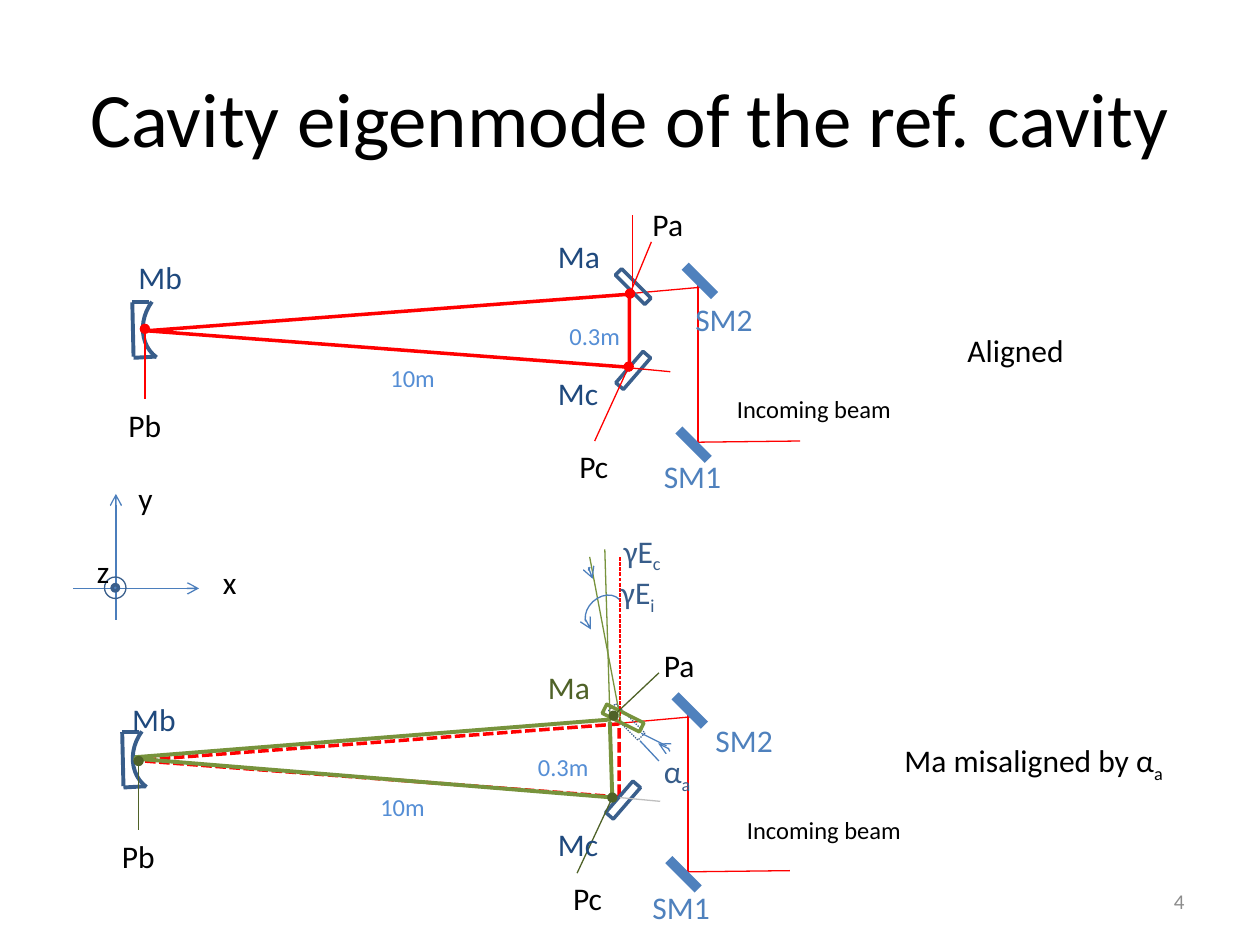
from dataclasses import dataclass

from lxml.etree import SubElement
from pptx import Presentation
from pptx.dml.color import RGBColor
from pptx.enum.dml import MSO_LINE as Dash
from pptx.enum.shapes import MSO_CONNECTOR as Connector, MSO_SHAPE as Shape
from pptx.enum.text import MSO_ANCHOR as Anchor, MSO_AUTO_SIZE as AutoSize, PP_ALIGN as Align
from pptx.oxml.ns import qn
from pptx.util import Inches, Pt

RED, BLUE, NAVY, BLACK = "FF0000", "4F81BD", "1F497D", "000000"
SKY, STEEL, AXIS, MIRROR = "558ED5", "385D8A", "4B7EBC", "3A5F8C"
GREEN, DARK_GREEN, GREY, SILVER = "77933C", "4F6228", "8C8C8C", "BFBFBF"

deck = Presentation()
deck.slide_width, deck.slide_height = Inches(10), Inches(7.5)
page = deck.slides.add_slide(deck.slide_layouts[6])


@dataclass
class Ray:
    start: tuple[float, float]
    end: tuple[float, float]
    color: str = RED
    width: float = 0.75
    dash: Dash | None = None
    head: str = ""
    tail: str = ""


@dataclass
class Outline:
    kind: Shape
    at: tuple[float, float, float, float]
    turn: float = 0
    fill: str = ""
    color: str = ""
    width: float = 2
    dash: Dash | None = None
    angles: tuple[float, ...] = ()
    head: str = ""


@dataclass
class Label:
    text: str
    at: tuple[float, float, float, float]
    color: str = BLACK
    size: float = 18
    sub: str = ""
    wrap: bool = False


def rgb(value: str) -> RGBColor:
    return RGBColor.from_string(value)


def style_line(line, color: str, width: float, dash: Dash | None, head: str, tail: str = "") -> None:
    line.color.rgb = rgb(color)
    line.width = Pt(width)
    if dash is not None:
        line.dash_style = dash
    for tag, kind in (("a:headEnd", head), ("a:tailEnd", tail)):
        if kind:
            SubElement(line._get_or_add_ln(), qn(tag)).set("type", kind)


def draw_ray(ray: Ray, dx: float = 0, dy: float = 0) -> None:
    (x1, y1), (x2, y2) = ray.start, ray.end
    connector = page.shapes.add_connector(
        Connector.STRAIGHT, Inches(x1 + dx), Inches(y1 + dy), Inches(x2 + dx), Inches(y2 + dy))
    style_line(connector.line, ray.color, ray.width, ray.dash, ray.head, ray.tail)
    SubElement(connector._element.spPr, qn("a:effectLst"))


def draw_outline(item: Outline, dx: float = 0, dy: float = 0) -> None:
    left, top, width, height = item.at
    shape = page.shapes.add_shape(
        item.kind, Inches(left + dx), Inches(top + dy), Inches(width), Inches(height))
    shape.rotation = item.turn
    shape.shadow.inherit = False
    for index, angle in enumerate(item.angles):
        shape.adjustments[index] = angle * 0.6  # degrees to 1/100000 of the stored unit
    if item.fill:
        shape.fill.solid()
        shape.fill.fore_color.rgb = rgb(item.fill)
    else:
        shape.fill.background()
    if item.color:
        style_line(shape.line, item.color, item.width, item.dash, item.head)
    else:
        shape.line.fill.background()


def add_text(text: str, at: tuple[float, float, float, float], *, color: str = BLACK,
             size: float = 18, sub: str = "", wrap: bool = True, grow: bool = False,
             align: Align = Align.LEFT, anchor: Anchor = Anchor.TOP) -> None:
    box = page.shapes.add_textbox(*map(Inches, at))
    frame = box.text_frame
    frame.word_wrap = wrap
    frame.auto_size = AutoSize.SHAPE_TO_FIT_TEXT if grow else AutoSize.NONE
    frame.vertical_anchor = anchor
    para = frame.paragraphs[0]
    para.alignment = align
    for part, lowered in ((text, False), (sub, True)):
        if not part:
            continue
        span = para.add_run()
        span.text = part
        span.font.name, span.font.size = "Calibri", Pt(size)
        span.font.color.rgb = rgb(color)
        if lowered:
            span._r.get_or_add_rPr().set("baseline", "-25000")


def draw(items: list, dx: float = 0, dy: float = 0) -> None:
    for item in items:
        if isinstance(item, Ray):
            draw_ray(item, dx, dy)
        elif isinstance(item, Outline):
            draw_outline(item, dx, dy)
        else:
            left, top, width, height = item.at
            add_text(item.text, (left + dx, top + dy, width, height), color=item.color,
                     size=item.size, sub=item.sub, wrap=item.wrap, grow=True)


def cavity(dash: Dash | None, leak: str) -> list:
    """Parts that both set-ups share, placed for the aligned one."""
    return [
        Outline(Shape.ISOSCELES_TRIANGLE, (2.79, 0.71, 0.58, 3.83), 270, color=RED, dash=dash),
        # Incoming beam and steering mirrors
        Ray((5, 2.33), (5.56, 2.28)),
        Ray((5.54, 2.25), (5.54, 3.55)),
        Ray((5.5, 3.51), (6.35, 3.5)),
        Outline(Shape.RECTANGLE, (5.39, 2.19, 0.33, 0.08), 45, fill=BLUE),
        Outline(Shape.RECTANGLE, (5.34, 3.49, 0.33, 0.08), 45, fill=BLUE),
        # Mirrors Mc and Mb
        Outline(Shape.RECTANGLE, (4.86, 2.9, 0.33, 0.08), 130.9, color=MIRROR),
        Outline(Shape.ARC, (1.15, 2.23, 0.58, 0.67), 216.1, color=STEEL, width=2.25),
        Ray((1.24, 2.83), (1.06, 2.84), STEEL, 2.25),
        Ray((1.06, 2.83), (1.05, 2.4), STEEL, 2.25),
        Ray((1.05, 2.4), (1.18, 2.4), STEEL, 2.25),
        Ray((5, 2.92), (5.32, 2.95), leak),
        Label("10m", (3, 2.83, 1.33, 0.34), SKY, 14, wrap=True),
    ]


def names(ma_color: str, **places: tuple[float, float]) -> list[Label]:
    """Labels that both set-ups carry, each at its own place."""
    formats = {
        "SM1": (0.66, BLUE), "SM2": (0.66, BLUE), "Mc": (0.52, NAVY), "Ma": (0.67, ma_color),
        "Mb": (0.55, NAVY), "Pa": (0.45, BLACK), "Pc": (0.43, BLACK), "Pb": (0.46, BLACK),
    }
    return [Label(name, (*places[name], width, 0.4), color, wrap=name == "Ma")
            for name, (width, color) in formats.items()]


def small_labels(length: tuple[float, float], beam: tuple[float, float]) -> list[Label]:
    return [Label("0.3m", (*length, 0.61, 0.34), SKY, 14),
            Label("Incoming beam", (*beam, 1.43, 0.34), size=14)]


# Title and page number
add_text("Cavity eigenmode of the ref. cavity", (0.5, 0.3, 9, 1.25), size=44,
         align=Align.CENTER, anchor=Anchor.MIDDLE)
add_text("4", (7.17, 6.95, 2.33, 0.4), color=GREY, size=12, align=Align.RIGHT, anchor=Anchor.MIDDLE)

# Aligned cavity
draw(cavity(None, RED))
draw([
    Outline(Shape.RECTANGLE, (4.86, 2.24, 0.33, 0.07), 45, color=MIRROR),
    Ray((5, 2.33), (5.17, 1.92), head="oval"),
    Ray((4.99, 2.91), (4.72, 3.5), head="oval"),
    Ray((1.15, 2.61), (1.15, 3.17), head="oval"),
    Ray((5.02, 2.32), (5.02, 1.71)),
    Label("Aligned", (7.58, 2.58, 0.98, 0.4)),
])
draw(names(NAVY, SM1=(5.17, 3.58), SM2=(5.42, 2.33), Mc=(4.33, 2.92), Ma=(4.33, 1.83),
           Mb=(1, 2), Pa=(5.08, 1.58), Pc=(4.5, 3.5), Pb=(0.92, 3.17)))
draw(small_labels((4.42, 2.5), (5.75, 3.08)))

# Coordinate axes
draw([
    Ray((0.58, 4.67), (1.58, 4.67), AXIS, tail="arrow"),
    Ray((0.92, 4.92), (0.92, 3.92), AXIS, tail="arrow"),
    Outline(Shape.OVAL, (0.83, 4.58, 0.17, 0.17), color=MIRROR, width=0.75),
    Outline(Shape.OVAL, (0.89, 4.64, 0.05, 0.05), fill=BLUE, color=MIRROR),
    Label("x", (1.67, 4.42, 0.31, 0.4)),
    Label("y", (1, 3.75, 0.32, 0.4)),
    Label("z", (0.67, 4.33, 0.25, 0.4), wrap=True),
])

# Cavity with Ma misaligned
draw(cavity(Dash.SQUARE_DOT, SILVER), dx=-0.08, dy=3.41)
draw([
    Outline(Shape.RECTANGLE, (4.81, 5.69, 0.33, 0.08), 45, color=STEEL, width=0.75,
            dash=Dash.ROUND_DOT),
    Outline(Shape.RECTANGLE, (4.78, 5.66, 0.33, 0.08), 26.6, color=GREEN),
    Ray((4.92, 5.72), (4.92, 4.42), dash=Dash.SQUARE_DOT),
    Ray((4.93, 5.74), (4.68, 4.42), GREEN),
    Ray((4.84, 5.73), (4.86, 6.34), GREEN, 2.25),
    Ray((4.85, 5.71), (1.07, 6.01), GREEN, 2.25),
    Ray((4.87, 6.33), (1.06, 6.02), GREEN, 2.25),
    Ray((4.86, 6.32), (4.8, 4.36), GREEN),
    # Angle marks
    Outline(Shape.ARC, (4.63, 4.74, 0.33, 0.26), 317.2, color=AXIS, width=0.75,
            angles=(172.74, 0), head="arrow"),
    Outline(Shape.ARC, (5.14, 5.9, 0.18, 0.18), 173.3, color=AXIS, width=0.75,
            angles=(92.75, 169.69), head="arrow"),
    Outline(Shape.ARC, (4.66, 4.43, 0.3, 0.16), 339.6, color=AXIS, width=0.75,
            angles=(162, 204), head="arrow"),
    Ray((5.08, 5.88), (5.23, 6.04), AXIS),
    Ray((5.09, 5.82), (5.29, 5.92), AXIS),
    Label("α", (5.17, 5.92, 0.43, 0.4), STEEL, sub="a"),
    Label("γE", (4.83, 4.5, 0.48, 0.4), STEEL, sub="i"),
    Label("γE", (4.85, 4.17, 0.51, 0.4), STEEL, sub="c"),
    # Spots on the mirrors
    Ray((4.87, 5.68), (5.23, 5.34), DARK_GREEN, head="oval"),
    Ray((4.86, 6.33), (4.58, 6.93), DARK_GREEN, head="oval"),
    Ray((1.1, 6.04), (1.1, 6.59), DARK_GREEN, head="oval"),
    Label("Ma misaligned by α", (7.08, 5.83, 2.71, 0.4), sub="a", wrap=True),
])
draw(names(DARK_GREEN, SM1=(5.08, 7), SM2=(5.58, 5.67), Mc=(4.33, 6.5), Ma=(4.25, 5.25),
           Mb=(0.95, 5.51), Pa=(5.17, 5.08), Pc=(4.45, 6.93), Pb=(0.87, 6.59)))
draw(small_labels((4.17, 5.92), (5.83, 6.42)))

deck.save("out.pptx")
